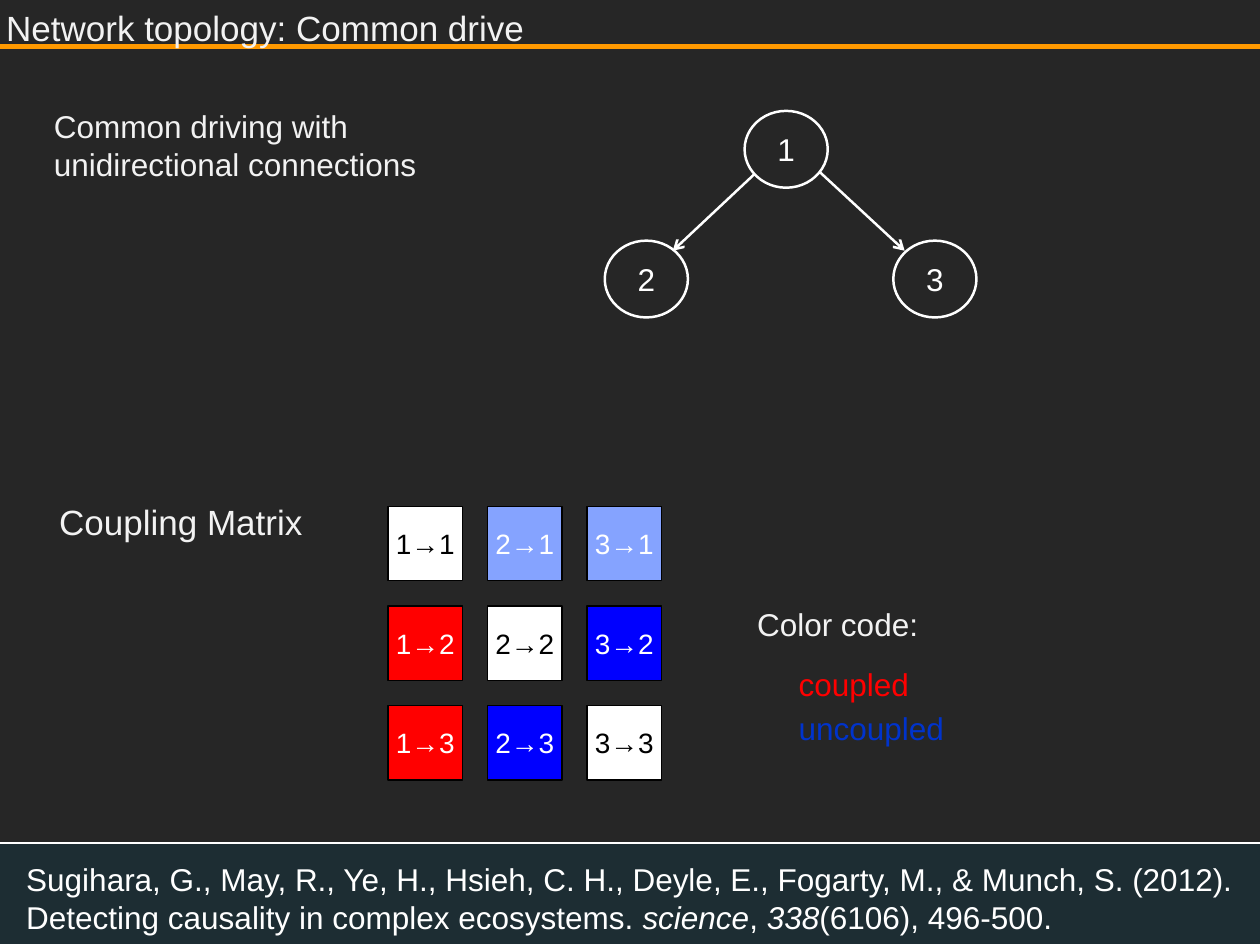
from dataclasses import dataclass

import pptx
import pptx.dml.color
import pptx.enum.shapes
import pptx.enum.text
import pptx.oxml.ns
import pptx.util
from lxml import etree

Inches = pptx.util.Inches
Pt = pptx.util.Pt
RGBColor = pptx.dml.color.RGBColor
Shapes = pptx.enum.shapes.MSO_SHAPE
AutoSize = pptx.enum.text.MSO_AUTO_SIZE
qn = pptx.oxml.ns.qn

BACKGROUND = RGBColor(0x26, 0x26, 0x26)
ORANGE = RGBColor(0xFF, 0x99, 0x00)
FOOTER = RGBColor(0x1D, 0x2D, 0x33)
WHITE = RGBColor(0xFF, 0xFF, 0xFF)
BLACK = RGBColor(0x00, 0x00, 0x00)
LIGHT = RGBColor(0xF2, 0xF2, 0xF2)
RED = RGBColor(0xFF, 0x00, 0x00)
BLUE = RGBColor(0x00, 0x00, 0xFF)
PALE_BLUE = RGBColor(0x85, 0xA3, 0xFF)
DARK_BLUE = RGBColor(0x00, 0x33, 0xCC)

FONT = "Arial"
NODE_WIDTH, NODE_HEIGHT = 0.66, 0.61
CELL_SIZE, CELL_PITCH = 0.59, 0.79
MATRIX_LEFT, MATRIX_TOP = 3.08, 4.02


@dataclass
class Box:
    left: float
    top: float
    width: float
    height: float

    def lengths(self):
        return [Inches(value) for value in (self.left, self.top, self.width, self.height)]


@dataclass
class Label:
    box: Box
    lines: list[str]
    color: RGBColor


@dataclass
class Node:
    name: str
    left: float
    top: float


@dataclass
class Line:
    start: tuple[float, float]
    end: tuple[float, float]
    color: RGBColor
    width: float
    arrow: bool = False


HEADINGS = [
    Label(Box(-0.17, 0, 5.29, 0.79), ["Network topology: Common drive"], LIGHT),
    Label(Box(0.25, 3.92, 4.21, 0.79), ["Coupling Matrix"], LIGHT),
]
LABELS = [
    Label(Box(6.24, 5.23, 1.08, 0.39), ["coupled"], RED),
    Label(Box(5.91, 4.75, 1.49, 0.39), ["Color code:"], LIGHT),
    Label(Box(0.33, 0.8, 3.1, 0.68), ["Common driving with", "unidirectional connections"], LIGHT),
    Label(Box(6.24, 5.58, 1.36, 0.39), ["uncoupled"], DARK_BLUE),
]
NODES = [Node("2", 4.8, 1.91), Node("1", 5.91, 0.88), Node("3", 7.09, 1.91)]
ARROWS = [
    Line((5.99, 1.38), (5.34, 1.99), WHITE, 1.42, True),
    Line((6.5, 1.36), (7.18, 1.99), WHITE, 1.42, True),
]
MATRIX_FILLS = [
    [WHITE, PALE_BLUE, PALE_BLUE],
    [RED, WHITE, BLUE],
    [RED, BLUE, WHITE],
]
CITATION = [
    ("Sugihara, G., May, R., Ye, H., Hsieh, C. H., Deyle, E., Fogarty, M., & Munch, S. (2012). "
     "Detecting causality in complex ecosystems. ", False),
    ("science", True),
    (", ", False),
    ("338", True),
    ("(6106), 496-500.", False),
]


def set_font(paragraph, size: float, color: RGBColor) -> None:
    paragraph.font.name = FONT
    paragraph.font.size = Pt(size)
    paragraph.font.color.rgb = color


def add_line(slide, line: Line) -> None:
    connector = slide.shapes.add_connector(
        pptx.enum.shapes.MSO_CONNECTOR.STRAIGHT,
        *[Inches(value) for value in line.start + line.end])
    connector.line.color.rgb = line.color
    connector.line.width = Pt(line.width)
    if line.arrow:
        outline = connector.line._get_or_add_ln()
        etree.SubElement(outline, qn("a:tailEnd"), type="arrow")
    etree.SubElement(connector._element.spPr, qn("a:effectLst"))


def add_shape(slide, kind, box: Box, fill: RGBColor | None, line: RGBColor, width: float):
    shape = slide.shapes.add_shape(kind, *box.lengths())
    shape.shadow.inherit = False
    if fill is None:
        shape.fill.background()
    else:
        shape.fill.solid()
        shape.fill.fore_color.rgb = fill
    shape.line.color.rgb = line
    shape.line.width = Pt(width)
    return shape


def center_text(shape, text: str, size: float, color: RGBColor) -> None:
    frame = shape.text_frame
    frame.word_wrap = False
    frame.vertical_anchor = pptx.enum.text.MSO_ANCHOR.MIDDLE
    paragraph = frame.paragraphs[0]
    paragraph.text = text
    paragraph.alignment = pptx.enum.text.PP_ALIGN.CENTER
    set_font(paragraph, size, color)


def add_label(slide, label: Label) -> None:
    frame = slide.shapes.add_textbox(*label.box.lengths()).text_frame
    frame.word_wrap = False
    frame.auto_size = AutoSize.SHAPE_TO_FIT_TEXT
    frame.text = "\n".join(label.lines)
    for paragraph in frame.paragraphs:
        set_font(paragraph, 18, label.color)


def add_heading(slide, label: Label) -> None:
    frame = slide.shapes.add_textbox(*label.box.lengths()).text_frame
    frame.word_wrap = True
    frame.text = label.lines[0]
    paragraph = frame.paragraphs[0]
    paragraph._p.get_or_add_pPr().set("marL", str(Inches(0.12)))
    paragraph.space_after = Pt(14.1)
    set_font(paragraph, 20, label.color)


def add_matrix(slide) -> None:
    for row, fills in enumerate(MATRIX_FILLS):
        for column, fill in enumerate(fills):
            box = Box(MATRIX_LEFT + column * CELL_PITCH, MATRIX_TOP + row * CELL_PITCH,
                      CELL_SIZE, CELL_SIZE)
            cell = add_shape(slide, Shapes.RECTANGLE, box, fill, BLACK, 0)
            center_text(cell, f"{column + 1}→{row + 1}", 16, BLACK if fill == WHITE else WHITE)


def add_citation(slide) -> None:
    frame = slide.shapes.add_textbox(*Box(0.11, 6.78, 10.22, 0.71).lengths()).text_frame
    frame.word_wrap = True
    frame.auto_size = AutoSize.SHAPE_TO_FIT_TEXT
    paragraph = frame.paragraphs[0]
    for text, italic in CITATION:
        run = paragraph.add_run()
        run.text = text
        run.font.italic = italic
    set_font(paragraph, 18, WHITE)


def main() -> None:
    presentation = pptx.Presentation()
    presentation.slide_width = Inches(10)
    presentation.slide_height = Inches(7.5)
    slide = presentation.slides.add_slide(presentation.slide_layouts[6])
    slide.background.fill.solid()
    slide.background.fill.fore_color.rgb = BACKGROUND

    add_line(slide, Line((0, 0.37), (10, 0.37), ORANGE, 3))
    add_shape(slide, Shapes.RECTANGLE, Box(-0.08, 6.69, 10.17, 0.81), FOOTER, WHITE, 0.75)
    for heading in HEADINGS:
        add_heading(slide, heading)
    for node in NODES:
        box = Box(node.left, node.top, NODE_WIDTH, NODE_HEIGHT)
        oval = add_shape(slide, Shapes.OVAL, box, None, WHITE, 1.42)
        center_text(oval, node.name, 18, WHITE)
    for arrow in ARROWS:
        add_line(slide, arrow)
    add_matrix(slide)
    for label in LABELS:
        add_label(slide, label)
    add_citation(slide)
    presentation.save("out.pptx")


if __name__ == "__main__":
    main()
